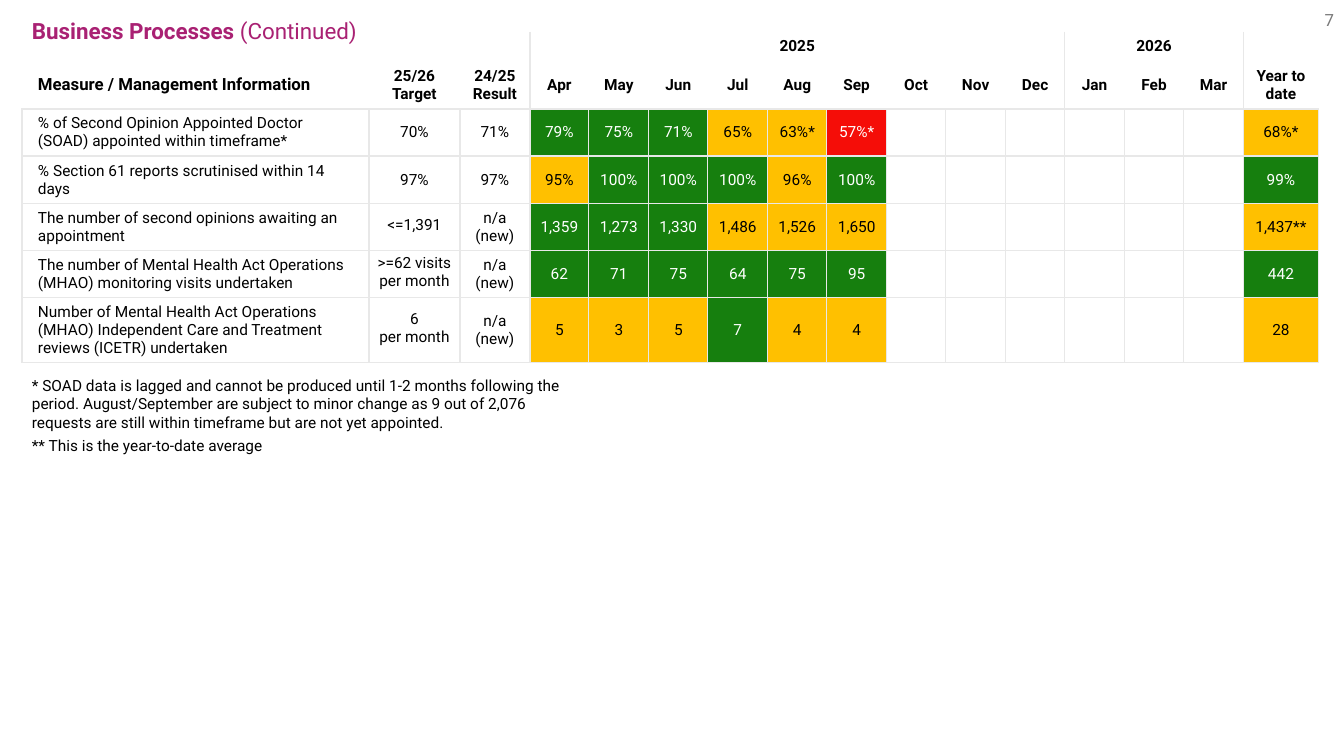
from dataclasses import dataclass
from typing import NamedTuple

from lxml import etree
from pptx import Presentation
from pptx import util as u
from pptx.dml.color import RGBColor
from pptx.enum import text
from pptx.oxml.ns import qn

PX_PER_INCH = 100.8
FONT = "Roboto"
WHITE = RGBColor(0xFF, 0xFF, 0xFF)
BLACK = RGBColor(0x00, 0x00, 0x00)
GREEN = RGBColor(0x16, 0x7F, 0x0E)
AMBER = RGBColor(0xFF, 0xC0, 0x00)
RED = RGBColor(0xF5, 0x0D, 0x08)
GRID = RGBColor(0xE8, 0xE8, 0xE8)
MAGENTA = RGBColor(0xA9, 0x21, 0x73)
GREY = RGBColor(0x79, 0x79, 0x79)

LEFT, CENTER, RIGHT = text.PP_ALIGN.LEFT, text.PP_ALIGN.CENTER, text.PP_ALIGN.RIGHT
MIDDLE, TOP = text.MSO_ANCHOR.MIDDLE, text.MSO_ANCHOR.TOP


class Insets(NamedTuple):
    left: int
    top: int
    right: int
    bottom: int


HEADER_INSETS = Insets(10, 5, 10, 5)
MEASURE_INSETS = Insets(16, 5, 16, 5)
TARGET_INSETS = Insets(1, 1, 1, 5)
NO_INSETS = Insets(0, 0, 0, 0)


class Status(NamedTuple):
    fill: RGBColor
    font: RGBColor


STATUSES = {"G": Status(GREEN, WHITE), "A": Status(AMBER, BLACK), "R": Status(RED, WHITE)}
PLAIN = Status(WHITE, BLACK)


@dataclass
class Measure:
    title: str
    target: str
    result: str
    months: list[str]
    month_statuses: str
    year_to_date: str
    year_status: str
    target_insets: Insets = TARGET_INSETS


@dataclass
class CellStyle:
    size: int = 11
    bold: bool = False
    align: text.PP_ALIGN = CENTER
    status: Status = PLAIN
    insets: Insets = NO_INSETS
    borders: str = "LRTB"


MONTHS = ["Apr", "May", "Jun", "Jul", "Aug", "Sep", "Oct", "Nov", "Dec", "Jan", "Feb", "Mar"]
HEADINGS = ["Measure / Management Information", "25/26 Target", "24/25 Result", *MONTHS, "Year to date"]
FIRST_MONTH, FIRST_2026, YEAR_COLUMN = 3, 12, 15
GROUP_STARTS = (FIRST_MONTH, FIRST_2026, YEAR_COLUMN)
YEARS = {FIRST_MONTH: "2025", FIRST_2026: "2026"}
MONTH_EDGES = [530 + 119 * month // 2 for month in range(len(MONTHS) + 1)]
COLUMN_EDGES = [22, 369, 460, *MONTH_EDGES, 1319]
ROW_EDGES = [32, 60, 108, 155, 203, 250, 297, 362]

MEASURES = [
    Measure("% of Second Opinion Appointed Doctor (SOAD) appointed within timeframe*", "70%", "71%",
            ["79%", "75%", "71%", "65%", "63%*", "57%*"], "GGGAAR", "68%*", "A", NO_INSETS),
    Measure("% Section 61 reports scrutinised within 14 days", "97%", "97%",
            ["95%", "100%", "100%", "100%", "96%", "100%"], "AGGGAG", "99%", "G", NO_INSETS),
    Measure("The number of second opinions awaiting an appointment", "<=1,391", "n/a\n(new)",
            ["1,359", "1,273", "1,330", "1,486", "1,526", "1,650"], "GGGAAA", "1,437**", "A"),
    Measure("The number of Mental Health Act Operations (MHAO) monitoring visits undertaken",
            ">=62 visits per month", "n/a\n(new)",
            ["62", "71", "75", "64", "75", "95"], "GGGGGG", "442", "G"),
    Measure("Number of Mental Health Act Operations (MHAO) Independent Care and Treatment "
            "reviews (ICETR) undertaken", "6\nper month", "n/a\n(new)",
            ["5", "3", "5", "7", "4", "4"], "AAAGAA", "28", "A"),
]

NOTES = (
    "* SOAD data is lagged and cannot be produced until 1-2 months following the period. "
    "August/September are subject to minor change as 9 out of 2,076 requests are still within "
    "timeframe but are not yet appointed.\n** This is the year-to-date average"
)


def px(length: int) -> u.Emu:
    return u.Emu(round(length * 914400 / PX_PER_INCH))


def format_text(text_frame, size: int, color: RGBColor, bold: bool, align: text.PP_ALIGN) -> None:
    for paragraph in text_frame.paragraphs:
        paragraph.alignment = align
        for run in paragraph.runs:
            run.font.name = FONT
            run.font.size = u.Pt(size)
            run.font.bold = bold
            run.font.color.rgb = color
        if not paragraph.runs:
            etree.SubElement(paragraph._p, qn("a:endParaRPr"), sz=str(size * 100))


def set_borders(cell, visible: str) -> None:
    properties = cell._tc.get_or_add_tcPr()
    for side in "LRTB":
        line = etree.SubElement(properties, qn(f"a:ln{side}"), w=str(u.Pt(1)))
        if side in visible:
            fill = etree.SubElement(line, qn("a:solidFill"))
            etree.SubElement(fill, qn("a:srgbClr"), val=str(GRID))
        else:
            etree.SubElement(line, qn("a:noFill"))


def fill_cell(cell, content: str, style: CellStyle) -> None:
    set_borders(cell, style.borders)
    cell.fill.solid()
    cell.fill.fore_color.rgb = style.status.fill
    cell.vertical_anchor = MIDDLE
    cell.margin_left, cell.margin_top, cell.margin_right, cell.margin_bottom = map(px, style.insets)
    cell.text_frame.text = content
    format_text(cell.text_frame, style.size, style.status.font, style.bold, style.align)


def header_borders(column: int) -> str:
    left = "L" if column in GROUP_STARTS else ""
    right = "R" if column + 1 in GROUP_STARTS else ""
    return left + right


def fill_header(table) -> None:
    for column, heading in enumerate(HEADINGS):
        borders = header_borders(column)
        year_borders = "LR" if column in YEARS else borders
        fill_cell(table.cell(0, column), YEARS.get(column, ""),
                  CellStyle(bold=True, insets=HEADER_INSETS, borders=year_borders))
        style = CellStyle(bold=True, insets=HEADER_INSETS, borders=borders + "B")
        if column == 0:
            style.size, style.align, style.insets = 12, LEFT, MEASURE_INSETS
        fill_cell(table.cell(1, column), heading, style)
    for start, end in zip(GROUP_STARTS, GROUP_STARTS[1:]):
        table.cell(0, start).merge(table.cell(0, end - 1))


def fill_measure(table, row: int, measure: Measure) -> None:
    fill_cell(table.cell(row, 0), measure.title, CellStyle(align=LEFT, insets=MEASURE_INSETS))
    fill_cell(table.cell(row, 1), measure.target, CellStyle(insets=measure.target_insets))
    fill_cell(table.cell(row, 2), measure.result, CellStyle())
    blanks = len(MONTHS) - len(measure.months)
    values = [*measure.months, *[""] * blanks, measure.year_to_date]
    codes = measure.month_statuses + " " * blanks + measure.year_status
    for column, (value, code) in enumerate(zip(values, codes), FIRST_MONTH):
        fill_cell(table.cell(row, column), value, CellStyle(status=STATUSES.get(code, PLAIN)))


def add_measures_table(slide) -> None:
    left, right, top, bottom = COLUMN_EDGES[0], COLUMN_EDGES[-1], ROW_EDGES[0], ROW_EDGES[-1]
    table = slide.shapes.add_table(len(ROW_EDGES) - 1, len(HEADINGS), px(left), px(top),
                                   px(right - left), px(bottom - top)).table
    table.first_row = table.horz_banding = False
    for column, start, end in zip(table.columns, COLUMN_EDGES, COLUMN_EDGES[1:]):
        column.width = px(end - start)
    for row, start, end in zip(table.rows, ROW_EDGES, ROW_EDGES[1:]):
        row.height = px(end - start)
    fill_header(table)
    for row, measure in enumerate(MEASURES, 2):
        fill_measure(table, row, measure)


def add_text(slide, box: tuple[int, int, int, int], content: str, size: int, color: RGBColor,
             bold: bool = False, align: text.PP_ALIGN = LEFT, anchor: text.MSO_ANCHOR = TOP):
    text_frame = slide.shapes.add_textbox(*map(px, box)).text_frame
    text_frame.word_wrap = True
    text_frame.vertical_anchor = anchor
    text_frame.text = content
    format_text(text_frame, size, color, bold, align)
    return text_frame


def main() -> None:
    presentation = Presentation()
    presentation.slide_width, presentation.slide_height = px(1344), px(756)
    slide = presentation.slides.add_slide(presentation.slide_layouts[6])
    add_measures_table(slide)
    title = add_text(slide, (22, 12, 531, 37), "Business Processes ", 16, MAGENTA, bold=True)
    title.paragraphs[0].add_run().text = "(Continued)"
    format_text(title, 16, MAGENTA, False, LEFT)
    title.paragraphs[0].runs[0].font.bold = True
    add_text(slide, (1041, 0, 303, 40), "7", 12, GREY, align=RIGHT, anchor=MIDDLE)
    notes = add_text(slide, (22, 371, 556, 89), NOTES, 11, BLACK)
    for paragraph in notes.paragraphs:
        paragraph.space_after = u.Pt(3)
    presentation.save("out.pptx")


if __name__ == "__main__":
    main()
